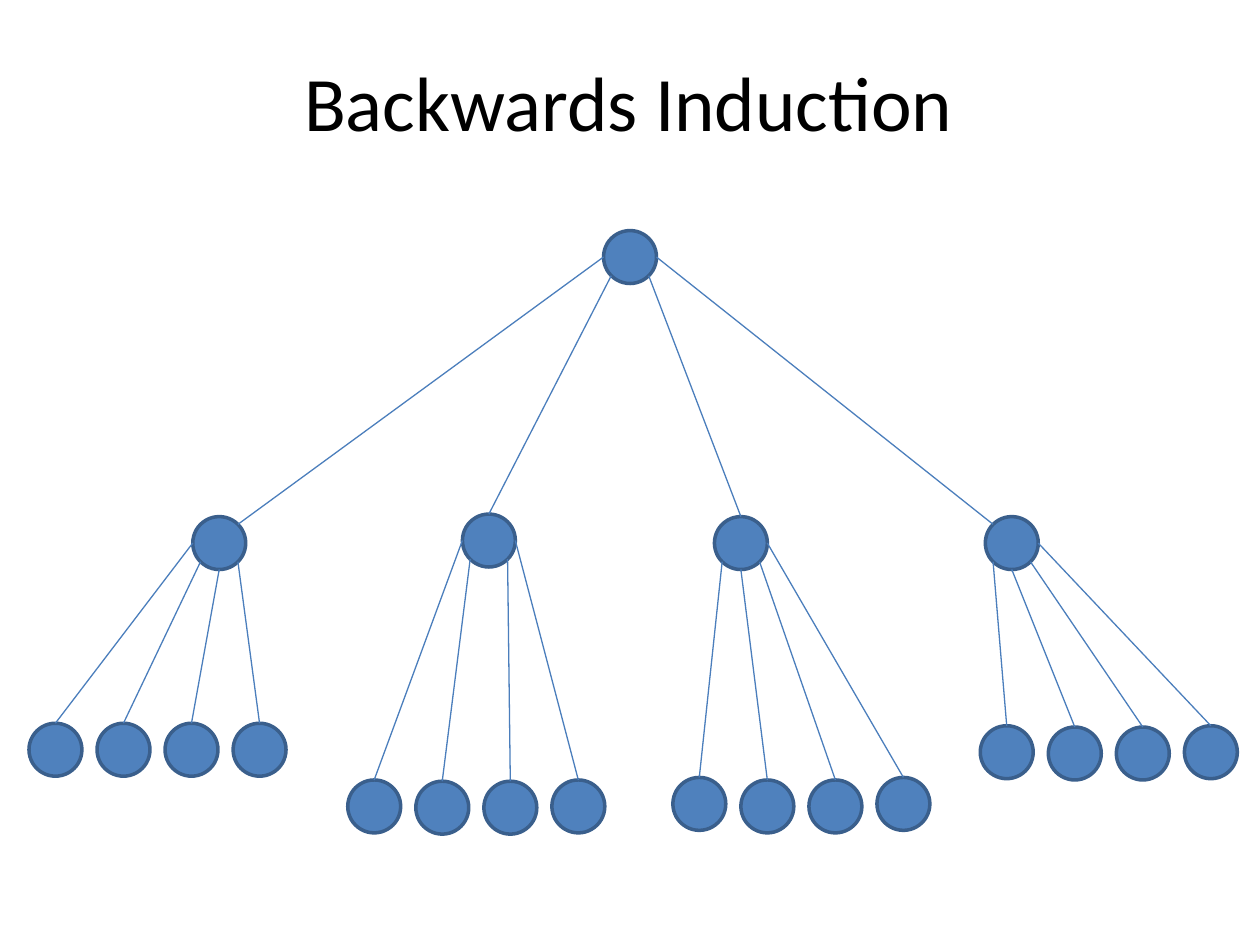
from math import sqrt

from pptx import Presentation
from pptx.dml.color import RGBColor
from pptx.enum.shapes import MSO_CONNECTOR as Connector, MSO_SHAPE as Shape
from pptx.enum.text import MSO_ANCHOR as Anchor, PP_ALIGN as Align
from pptx.oxml.ns import qn
from pptx.util import Inches, Pt

BLACK = RGBColor(0x00, 0x00, 0x00)
NODE_FILL = RGBColor(0x4F, 0x81, 0xBD)
NODE_LINE = RGBColor(0x3A, 0x5F, 0x8C)
EDGE_LINE = RGBColor(0x4B, 0x7E, 0xBC)

TITLE = "Backwards Induction"
TITLE_FORMAT = {"size": Pt(44), "name": "Calibri"}
DIAMETER = 0.42
LEAF_PITCH = 0.54

DIAGONAL = 1 / sqrt(2)
SITES = {
    "top": (0, -1),
    "top left": (-DIAGONAL, -DIAGONAL),
    "left": (-1, 0),
    "bottom left": (-DIAGONAL, DIAGONAL),
    "bottom": (0, 1),
    "bottom right": (DIAGONAL, DIAGONAL),
    "right": (1, 0),
    "top right": (DIAGONAL, -DIAGONAL),
}

ROOT = (4.79, 1.83)
BRANCHES = [
    {"node": (1.53, 4.1), "root_exit": "left", "entry": "top right",
     "leaf_left": 0.23, "leaf_tops": (5.74, 5.74, 5.74, 5.74),
     "exits": ("left", "bottom left", "bottom", "bottom right")},
    {"node": (3.67, 4.08), "root_exit": "bottom left", "entry": "top",
     "leaf_left": 2.76, "leaf_tops": (6.19, 6.2, 6.2, 6.19),
     "exits": ("left", "bottom left", "bottom right", "right")},
    {"node": (5.67, 4.1), "root_exit": "bottom right", "entry": "top",
     "leaf_left": 5.34, "leaf_tops": (6.17, 6.19, 6.19, 6.17),
     "exits": ("bottom left", "bottom", "bottom right", "right")},
    {"node": (7.82, 4.1), "root_exit": "right", "entry": "top left",
     "leaf_left": 7.78, "leaf_tops": (5.76, 5.77, 5.77, 5.76),
     "exits": ("bottom left", "bottom", "bottom right", "right")},
]


def add_title(page):
    box = page.shapes.add_textbox(Inches(0.49), Inches(0.17), Inches(9), Inches(1.25))
    frame = box.text_frame
    frame.word_wrap = True
    frame.vertical_anchor = Anchor.MIDDLE
    para = frame.paragraphs[0]
    para.alignment = Align.CENTER
    span = para.add_run()
    span.text = TITLE
    for name, value in TITLE_FORMAT.items():
        setattr(span.font, name, value)
    span.font.color.rgb = BLACK


def add_node(page, position):
    left, top = map(Inches, position)
    node = page.shapes.add_shape(Shape.OVAL, left, top, Inches(DIAMETER), Inches(DIAMETER))
    node.shadow.inherit = False
    node.fill.solid()
    node.fill.fore_color.rgb = NODE_FILL
    node.line.color.rgb = NODE_LINE
    node.line.width = Pt(2)


def site_point(position, site):
    radius = DIAMETER / 2
    return [Inches(start + radius * (1 + shift)) for start, shift in zip(position, SITES[site])]


def add_edge(page, parent, parent_site, child, child_site):
    edge = page.shapes.add_connector(
        Connector.STRAIGHT, *site_point(parent, parent_site), *site_point(child, child_site))
    edge.line.color.rgb = EDGE_LINE
    edge.line.width = Pt(0.75)
    properties = edge._element.spPr
    properties.append(properties.makeelement(qn("a:effectLst"), {}))


def main():
    deck = Presentation()
    deck.slide_width, deck.slide_height = Inches(10), Inches(7.5)
    page = deck.slides.add_slide(deck.slide_layouts[6])
    add_title(page)

    leaves, branch_nodes, root_edges, leaf_edges = [], [], [], []
    for branch in BRANCHES:
        node = branch["node"]
        branch_nodes.append(node)
        root_edges.append((ROOT, branch["root_exit"], node, branch["entry"]))
        for index, (top, exit_site) in enumerate(zip(branch["leaf_tops"], branch["exits"])):
            leaf = (branch["leaf_left"] + index * LEAF_PITCH, top)
            leaves.append(leaf)
            leaf_edges.append((node, exit_site, leaf, "top"))

    for position in leaves + branch_nodes + [ROOT]:
        add_node(page, position)
    for edge in root_edges + leaf_edges:
        add_edge(page, *edge)
    deck.save("out.pptx")


if __name__ == "__main__":
    main()
